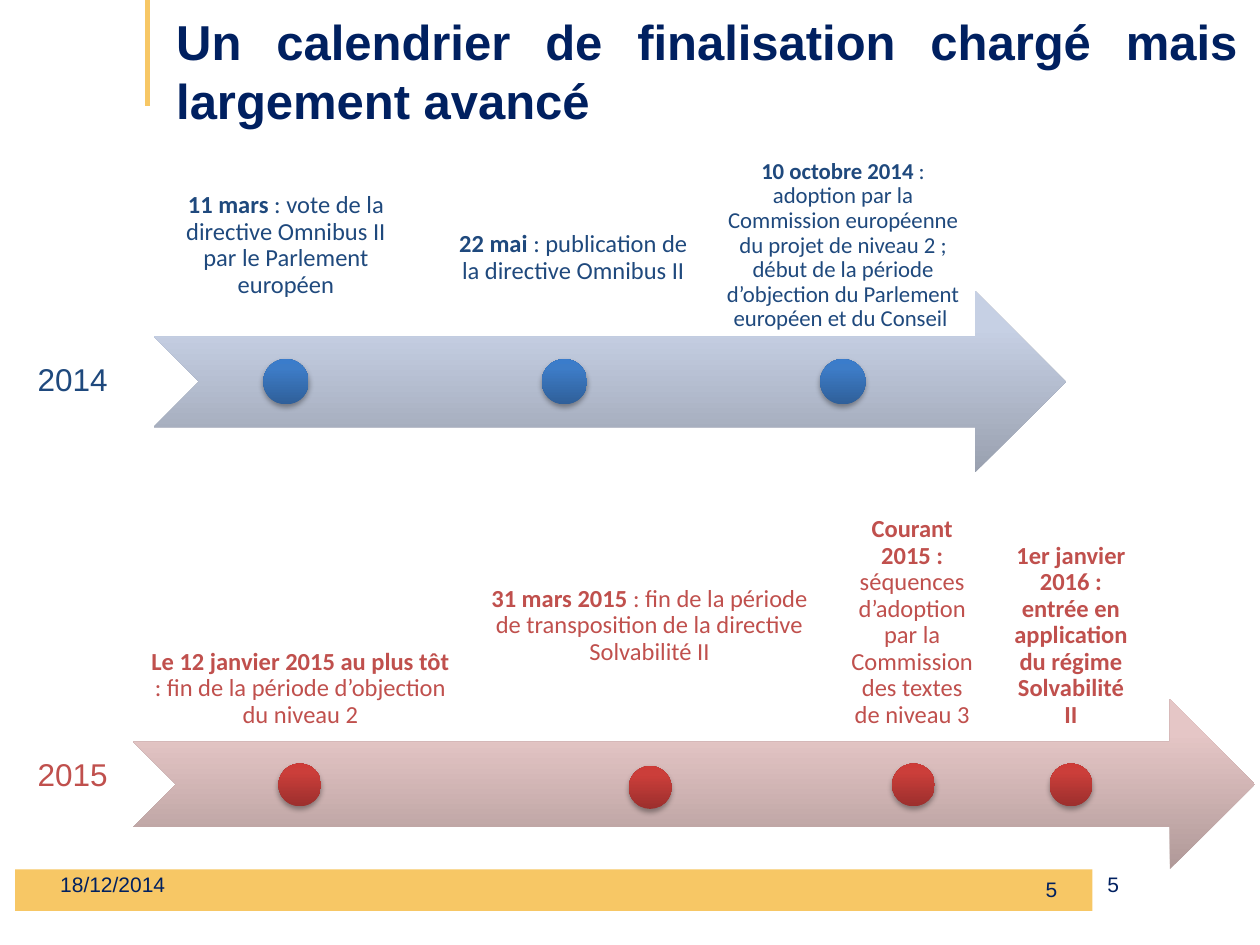
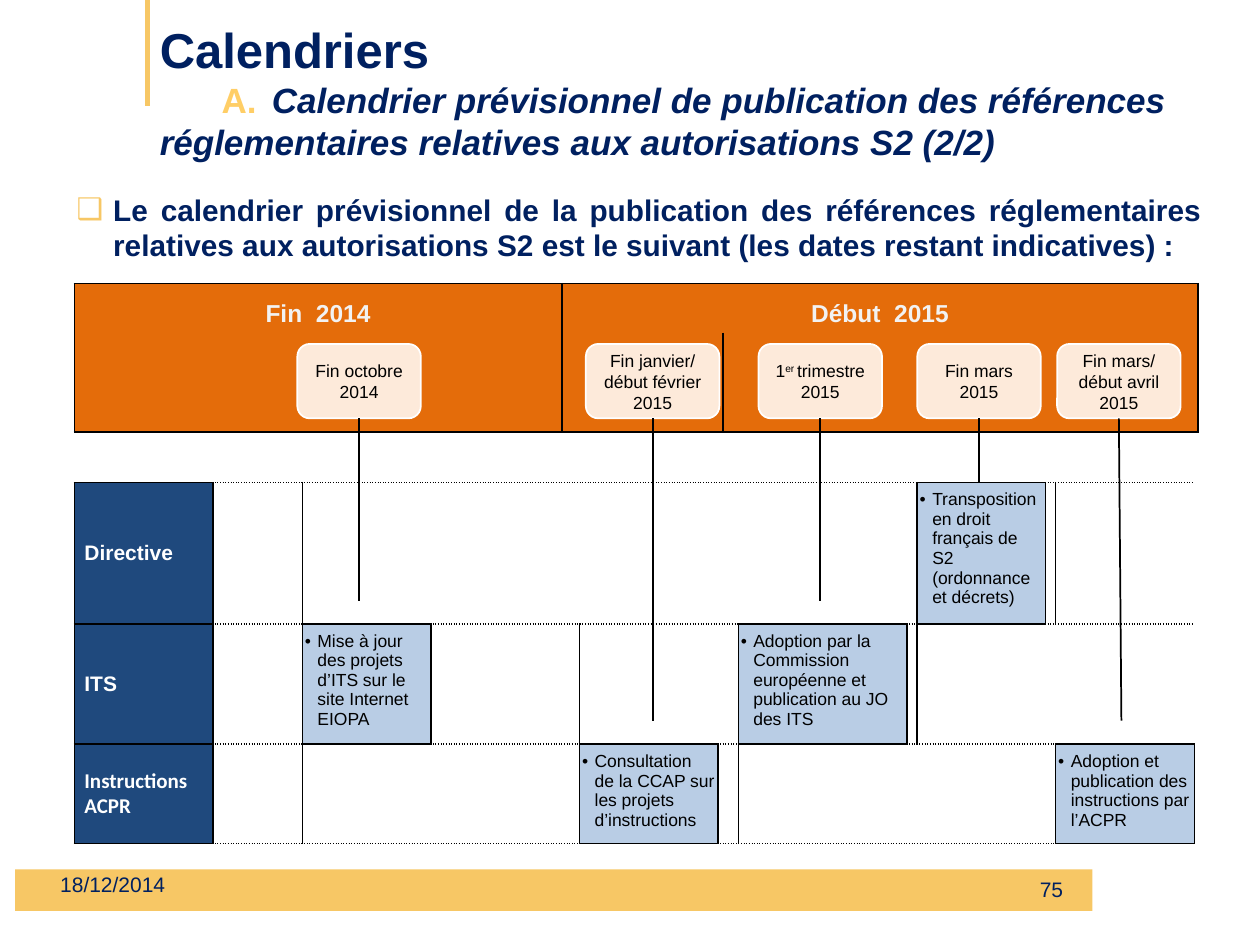
import collections
import copy
import dataclasses

import lxml.etree
import pptx
import pptx.dml.color
import pptx.enum.shapes
import pptx.enum.text
import pptx.oxml.ns
import pptx.util

PX = 9144  # one px is a hundredth of an inch
SHAPE = pptx.enum.shapes.MSO_SHAPE
ALIGN = pptx.enum.text.PP_ALIGN
ANCHOR = pptx.enum.text.MSO_ANCHOR
NO_STYLE = "{2D5ABB26-0587-4C30-8999-92F81FD0307C}"
OPPOSITE = {"L": ("R", 0, -1), "R": ("L", 0, 1), "T": ("B", -1, 0), "B": ("T", 1, 0)}


@dataclasses.dataclass(frozen=True)
class Theme:
    font: str = "Arial"
    label_font: str = "Calibri"
    navy: str = "002060"
    gold: str = "F7C765"
    letter_gold: str = "FFCE66"
    blue: str = "1F497D"
    red: str = "C0504D"
    orange: str = "E46C0A"
    peach: str = "FDEADA"
    pale_blue: str = "B9CDE5"
    light: str = "F2F2F2"
    white: str = "FFFFFF"
    black: str = "000000"
    blue_arrow: tuple = ("99A0AF", "C6D0E4", "C7D1E5")
    blue_dot: tuple = ("2F5F99", "3D7CC7", "3A7CCB")
    red_arrow: tuple = ("B09998", "E5C6C6", "E6C7C6")
    red_dot: tuple = ("9C2F2D", "CB3E3A", "CE3B37")
    title: int = 28
    subtitle: int = 20
    year: int = 18
    body: int = 17
    label: int = 14
    footer: int = 12
    small: int = 10


def px(*lengths):
    return [pptx.util.Emu(length * PX) for length in lengths]


def rgb(value):
    return pptx.dml.color.RGBColor.from_string(value)


def add_xml(parent, tag, **attributes):
    element = lxml.etree.SubElement(parent, pptx.oxml.ns.qn(tag))
    for name, value in attributes.items():
        element.set(name, str(value))
    return element


class Deck:
    def __init__(self, theme):
        self.theme = theme
        self.presentation = pptx.Presentation()
        self.presentation.slide_width, self.presentation.slide_height = px(1000, 750)
        self.slide = None

    def new_slide(self, number):
        """Start a slide with its title rule, footer band, number and date."""
        theme = self.theme
        self.slide = self.presentation.slides.add_slide(self.presentation.slide_layouts[6])
        self.line((117, 0), (117, 84), theme.gold, 2.75)
        self.shape(SHAPE.RECTANGLE, (12, 690, 855, 33), theme.gold)
        footer = dict(size=theme.footer, anchor=ANCHOR.MIDDLE)
        self.text((807, 690, 55, 31), number, align=ALIGN.CENTER, **footer)
        self.text((38, 682, 233, 40), "18/12/2014", **footer)

    def fill_text(self, frame, content, size, color=None, font=None, bold=False,
                  align=None, anchor=ANCHOR.TOP, insets=(10, 5), spacing=None,
                  bullet=None, bullet_color=None, hang=0, tabs=()):
        """Fill a frame or cell; content is a string or (text, overrides) runs."""
        frame.margin_left, frame.margin_top = px(*insets)
        frame.margin_right, frame.margin_bottom = px(*insets)
        frame.vertical_anchor = anchor
        text_frame = getattr(frame, "text_frame", frame)
        text_frame.word_wrap = True
        paragraph = text_frame.paragraphs[0]
        paragraph.alignment = align
        if spacing:
            paragraph.line_spacing = spacing
        properties = paragraph._p.get_or_add_pPr()
        if bullet:
            properties.set("marL", str(hang * PX))
            properties.set("indent", str(-hang * PX))
            if bullet_color:
                add_xml(add_xml(properties, "a:buClr"), "a:srgbClr", val=bullet_color)
            add_xml(properties, "a:buFont", typeface=self.theme.font)
            add_xml(properties, "a:buChar", char=bullet)
        if tabs:
            tab_list = add_xml(properties, "a:tabLst")
            for position in tabs:
                add_xml(tab_list, "a:tab", pos=position * PX, algn="l")
        paragraph.font.name = font or self.theme.font
        paragraph.font.size = pptx.util.Pt(size)
        paragraph.font.bold = bold
        paragraph.font.color.rgb = rgb(color or self.theme.navy)
        for text, changes in [(content, {})] if isinstance(content, str) else content:
            if text == "\n":
                paragraph.add_line_break()
                continue
            run = paragraph.add_run()
            run.text = text
            if "size" in changes:
                run.font.size = pptx.util.Pt(changes["size"])
            if "color" in changes:
                run.font.color.rgb = rgb(changes["color"])
            if "bold" in changes:
                run.font.bold = changes["bold"]
            if "italic" in changes:
                run.font.italic = changes["italic"]
            if "baseline" in changes:
                run._r.get_or_add_rPr().set("baseline", str(changes["baseline"]))

    def text(self, box, content, size, **style):
        shape = self.slide.shapes.add_textbox(*px(*box))
        self.fill_text(shape.text_frame, content, size, **style)

    def title(self, box, content, **style):
        self.text(box, content, self.theme.title, bold=True, anchor=ANCHOR.MIDDLE, **style)

    def shape(self, kind, box, fill, outline=None, shadow=False):
        """Add a preset shape; a tuple of three colours is a gradient from the bottom."""
        shape = self.slide.shapes.add_shape(kind, *px(*box))
        shape.shadow.inherit = False
        if isinstance(fill, tuple):
            shape.fill.gradient()
            shape.fill.gradient_angle = 90
            stop_list = next(shape._element.spPr.iter(pptx.oxml.ns.qn("a:gsLst")))
            stop_list.append(copy.deepcopy(stop_list[-1]))
            for stop, position, color in zip(shape.fill.gradient_stops, (0, 0.8, 1), fill):
                stop.position = position
                stop.color.rgb = rgb(color)
        else:
            shape.fill.solid()
            shape.fill.fore_color.rgb = rgb(fill)
        if outline:
            shape.line.color.rgb = rgb(outline)
            shape.line.width = pptx.util.Pt(1)
        else:
            shape.line.fill.background()
        if shadow:
            effects = shape._element.spPr.find(pptx.oxml.ns.qn("a:effectLst"))
            outer = add_xml(effects, "a:outerShdw", blurRad=39370, dist=22860,
                            dir=5400000, rotWithShape=0)
            color = add_xml(outer, "a:srgbClr", val=self.theme.black)
            add_xml(color, "a:alpha", val=35000)
        return shape

    def line(self, start, end, color, width=1, source=None):
        connector = self.slide.shapes.add_connector(
            pptx.enum.shapes.MSO_CONNECTOR.STRAIGHT, *px(*start, *end))
        if source is not None:
            connector.begin_connect(source, 2)
        connector.line.color.rgb = rgb(color)
        connector.line.width = pptx.util.Pt(width)
        add_xml(connector._element.spPr, "a:effectLst")

    def table(self, left, top, columns, rows):
        frame = self.slide.shapes.add_table(
            len(rows), len(columns), *px(left, top, sum(columns), sum(rows)))
        table = frame.table
        table.first_row = table.horz_banding = False
        table._tbl.tblPr.find(pptx.oxml.ns.qn("a:tableStyleId")).text = NO_STYLE
        for column, width in zip(table.columns, px(*columns)):
            column.width = width
        for row, height in zip(table.rows, px(*rows)):
            row.height = height
        for cell in table.iter_cells():
            cell.margin_left = cell.margin_right = 0
            cell.fill.background()
        return table

    def fill_cell(self, cell, color):
        cell.fill.solid()
        cell.fill.fore_color.rgb = rgb(color)

    def borders(self, table, borders):
        """Draw {(row, column): {side: dash}} in the order the format asks for."""
        for (row, column), sides in borders.items():
            properties = table.cell(row, column)._tc.get_or_add_tcPr()
            for index, side in enumerate(s for s in "LRTB" if s in sides):
                line = add_xml(properties, "a:ln" + side, w=12700)
                add_xml(add_xml(line, "a:solidFill"), "a:srgbClr", val=self.theme.black)
                add_xml(line, "a:prstDash", val=sides[side])
                properties.insert(index, line)

    def timeline(self, year, year_top, arrow, arrow_fill, dot_fill, dot_size, color, steps):
        self.shape(SHAPE.NOTCHED_RIGHT_ARROW, arrow, arrow_fill)
        for box, anchor, size, inset, date, event, dot in steps:
            runs = [(date, {"bold": True})] + ([(event, {})] if event else [])
            self.text(box, runs, size, color=color, font=self.theme.label_font,
                      align=ALIGN.CENTER, anchor=anchor, insets=(inset, inset), spacing=0.9)
            self.shape(SHAPE.OVAL, (*dot, dot_size, dot_size), dot_fill, shadow=True)
        self.text((20, year_top, 79, 40), year, self.theme.year, color=color)


def timeline_slide(deck):
    theme = deck.theme
    deck.new_slide("5")
    deck.title((130, 13, 862, 86),
               "Un calendrier de finalisation chargé mais largement avancé", align=ALIGN.JUSTIFY)
    middle, bottom, top = ANCHOR.MIDDLE, ANCHOR.BOTTOM, ANCHOR.TOP
    size = theme.label
    deck.timeline("2014", 281, (122, 231, 724, 144), theme.blue_arrow, theme.blue_dot, 36, theme.blue, [
        ((122, 123, 210, 144), middle, size, 11, "11 mars",
         " : vote de la directive Omnibus II par le Parlement européen", (209, 285)),
        ((350, 133, 210, 144), middle, size, 11, "22 mai",
         " : publication de la directive Omnibus II", (430, 285)),
        ((564, 123, 210, 144), middle, size - 1, 10, "10 octobre 2014",
         " : adoption par la Commission européenne du projet de niveau 2 ; début de la "
         "période d’objection du Parlement européen et du Conseil ", (651, 285)),
    ])
    deck.timeline("2015", 594, (106, 555, 890, 135), theme.red_arrow, theme.red_dot, 34, theme.red, [
        ((107, 454, 263, 135), bottom, size, 11, "Le 12 janvier 2015 au plus tôt",
         " : fin de la période d’objection du niveau 2", (221, 606)),
        ((375, 454, 281, 58), top, size, 11, "31 mars 2015",
         " : fin de la période de transposition de la directive Solvabilité II", (499, 608)),
        ((662, 454, 124, 135), bottom, size, 11, "Courant 2015 : ",
         "séquences d’adoption par la Commission des textes de niveau 3", (708, 606)),
        ((793, 454, 114, 135), bottom, size, 11,
         "1er janvier 2016 : entrée en application du régime Solvabilité II", "", (833, 606)),
    ])
    deck.text((665, 682, 233, 40), "5", theme.footer, align=ALIGN.RIGHT, anchor=middle)


def period_header(deck):
    theme = deck.theme
    table = deck.table(59, 225, (60, 114, 114, 99, 128, 114, 114, 149), (39, 79))
    borders = collections.defaultdict(dict)
    for cell in table.iter_cells():
        deck.fill_cell(cell, theme.orange)
    for column in range(8):
        borders[1, column]["B"] = "solid"
    for first, period in ((0, "Fin  2014"), (4, "Début  2015")):
        last = first + 3
        table.cell(0, first).merge(table.cell(0, last))
        deck.fill_text(table.cell(0, first), period, theme.label, color=theme.light, bold=True,
                       align=ALIGN.CENTER, anchor=ANCHOR.BOTTOM, insets=(2, 4))
        borders[0, first] = dict.fromkeys("LRT", "solid")
        borders[1, first]["L"] = borders[1, last]["R"] = "solid"
    deck.borders(table, borders)


def publication_grid(deck):
    theme = deck.theme
    columns = (110, 71, 102, 118, 110, 16, 134, 8, 102, 8, 110)
    table = deck.table(59, 383, columns, (105, 90, 74))
    headings = (("Directive", theme.font), ("ITS", theme.font),
                ("Instructions ACPR", theme.label_font))
    publications = {
        (0, 8): "Transposition en droit français de S2 (ordonnance et décrets)",
        (1, 2): "Mise à jour des projets d’ITS sur le site Internet EIOPA",
        (1, 6): "Adoption par la Commission européenne et publication au JO des ITS",
        (2, 4): "Consultation de la CCAP sur les projets d’instructions",
        (2, 10): "Adoption et publication des instructions par l’ACPR",
    }
    for row, (heading, font) in enumerate(headings):
        cell = table.cell(row, 0)
        deck.fill_cell(cell, theme.blue)
        deck.fill_text(cell, heading, theme.footer, color=theme.white, font=font, bold=True,
                       anchor=ANCHOR.MIDDLE, insets=(8, 6))
    for place, publication in publications.items():
        cell = table.cell(*place)
        deck.fill_cell(cell, theme.pale_blue)
        deck.fill_text(cell, publication, theme.small, color=theme.black, insets=(2, 6),
                       bullet="•", hang=10)
    # Dotted row rules, then solid outlines shared with the neighbouring cells
    borders = {(row, column): dict.fromkeys("TB", "sysDot")
               for row in range(3) for column in range(len(columns))}
    for row, column in [(row, 0) for row in range(3)] + list(publications):
        for side, (facing, down, right) in OPPOSITE.items():
            borders[row, column][side] = "solid"
            neighbour = (row + down, column + right)
            if neighbour in borders:
                borders[neighbour][facing] = "solid"
    deck.borders(table, borders)


def calendar_slide(deck):
    theme = deck.theme
    deck.new_slide("75")
    small = {"size": theme.subtitle}
    deck.title((117, 29, 883, 86), [
        ("Calendriers ", {}), ("\n", {}), ("\t", small),
        ("A. \t", {**small, "color": theme.letter_gold}),
        ("Calendrier prévisionnel de publication des références "
         "réglementaires relatives aux autorisations S2 (2/2)", {**small, "italic": True}),
    ], tabs=(49, 89))
    deck.text((51, 147, 913, 63),
              "Le calendrier prévisionnel de la publication des références réglementaires "
              "relatives aux autorisations S2 est le suivant (les dates restant indicatives) :",
              theme.body, bold=True, align=ALIGN.JUSTIFY,
              bullet="❑", bullet_color=theme.gold, hang=29)
    period_header(deck)
    publication_grid(deck)
    # Dates, each with a line down to its publication
    first_quarter = [("1", {}), ("er ", {"baseline": 30000}), ("trimestre 2015", {})]
    for left, width, date, end in (
            (236, 98, "Fin octobre 2014", (285, 477)),
            (465, 106, "Fin janvier/ début février 2015", (518, 572)),
            (602, 98, first_quarter, (651, 477)),
            (728, 98, "Fin mars 2015", (777, 383)),
            (839, 98, "Fin mars/ début avril 2015", (890, 572))):
        box = deck.shape(SHAPE.ROUNDED_RECTANGLE, (left, 273, width, 59), theme.peach, theme.white)
        deck.fill_text(box.text_frame, date, theme.small, color=theme.black,
                       align=ALIGN.CENTER, anchor=ANCHOR.MIDDLE)
        deck.line((left + width // 2, 332), end, theme.black, source=box)


def main():
    deck = Deck(Theme())
    timeline_slide(deck)
    calendar_slide(deck)
    deck.presentation.save("out.pptx")


if __name__ == "__main__":
    main()
